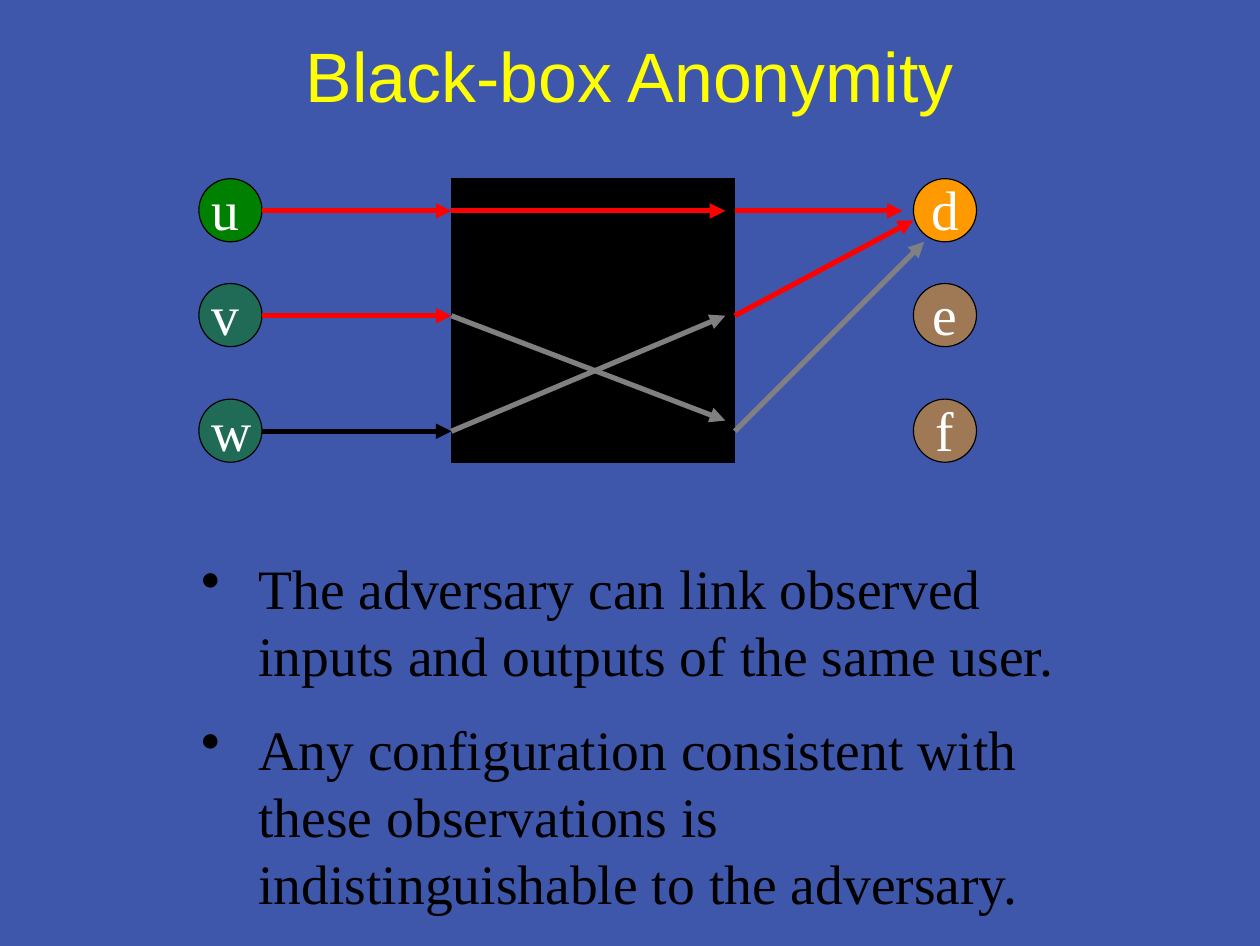
import pptx
import pptx.util
import pptx.dml.color
import pptx.enum.shapes
import pptx.enum.text
import pptx.oxml.ns
import lxml.etree

PX = 9525
THEME = {
    "background": "3F57AB", "title": "FFFF00", "text": "000000", "letter": "FFFFFF",
    "sender": "008000", "receiver": "FF9900", "box": "000000",
    "seen": "FF0000", "unseen": "000000", "possible": "808080",
    "title_font": "Arial", "body_font": "Times New Roman",
    "title_size": 44, "body_size": 35, "outline": 0.75, "arrow": 3.25,
}
ALIGN = pptx.enum.text.PP_ALIGN
SHAPES = pptx.enum.shapes.MSO_SHAPE


def color(name):
    return pptx.dml.color.RGBColor.from_string(THEME[name])


def add_text(lines, bounds, kind, ink, align, insets):
    box = slide.shapes.add_textbox(*[value * PX for value in bounds])
    frame = box.text_frame
    frame.word_wrap = True
    frame.margin_left = frame.margin_right = insets[0] * PX
    frame.margin_top = frame.margin_bottom = insets[1] * PX
    frame.text = "\n".join(lines)
    for paragraph in frame.paragraphs:
        paragraph.alignment = align
        paragraph.font.name = THEME[kind + "_font"]
        paragraph.font.size = pptx.util.Pt(THEME[kind + "_size"])
        paragraph.font.color.rgb = color(ink)
    return frame


presentation = pptx.Presentation()
presentation.slide_width = 1058 * PX
presentation.slide_height = 794 * PX
slide = presentation.slides.add_slide(presentation.slide_layouts[6])
slide.background.fill.solid()
slide.background.fill.fore_color.rgb = color("background")

title = add_text(["Black-box Anonymity"], (79, 0, 900, 132), "title", "title", ALIGN.CENTER, (0, 0))
title.vertical_anchor = pptx.enum.text.MSO_ANCHOR.MIDDLE
title.paragraphs[0].line_spacing = 0.95

CIRCLE = 53
SENDER_LEFT, RECEIVER_LEFT = 167, 767
SENDER_RIGHT = SENDER_LEFT + CIRCLE
BOX_LEFT, BOX_SIZE = 379, 238
BOX_RIGHT = BOX_LEFT + BOX_SIZE
ARROW_END = BOX_RIGHT - 8
ROWS = (177, 265, 362)
TOP, MIDDLE, BOTTOM = ROWS

outlines = [(SHAPES.RECTANGLE, BOX_LEFT, 150, BOX_SIZE, "box", False)]
for left, role in ((SENDER_LEFT, "sender"), (RECEIVER_LEFT, "receiver")):
    for row in ROWS:
        outlines.append((SHAPES.OVAL, left, row - 27, CIRCLE, role, row != TOP))

for preset, left, top, size, role, faded in outlines:
    shape = slide.shapes.add_shape(preset, left * PX, top * PX, size * PX, size * PX)
    shape.shadow.inherit = False
    shape.fill.solid()
    shape.fill.fore_color.rgb = color(role)
    shape.line.color.rgb = color("text")
    shape.line.width = pptx.util.Pt(THEME["outline"])
    if faded:
        fill_color = shape.fill._xPr.find(".//" + pptx.oxml.ns.qn("a:srgbClr"))
        lxml.etree.SubElement(fill_color, pptx.oxml.ns.qn("a:alpha"), val="50000")

letters = [
    ("u", SENDER_LEFT, CIRCLE, TOP, ALIGN.LEFT),
    ("v", SENDER_LEFT - 9, CIRCLE + 9, MIDDLE, ALIGN.CENTER),
    ("w", SENDER_LEFT, CIRCLE, BOTTOM, ALIGN.LEFT),
    ("d", RECEIVER_LEFT, CIRCLE, TOP, ALIGN.CENTER),
    ("e", RECEIVER_LEFT, CIRCLE, MIDDLE, ALIGN.CENTER),
    ("f", RECEIVER_LEFT, CIRCLE, BOTTOM, ALIGN.CENTER),
]
for letter, left, width, row, align in letters:
    add_text([letter], (left, row - 36, width, 67), "body", "letter", align, (11, 6))

arrows = [
    (SENDER_RIGHT, TOP, BOX_LEFT, TOP, "seen"),
    (SENDER_RIGHT, MIDDLE, BOX_LEFT, MIDDLE, "seen"),
    (SENDER_RIGHT, BOTTOM, BOX_LEFT, BOTTOM, "unseen"),
    (BOX_RIGHT, TOP, 758, TOP, "seen"),
    (BOX_LEFT, TOP, ARROW_END, TOP, "seen"),
    (BOX_LEFT, MIDDLE, ARROW_END, 353, "possible"),
    (BOX_LEFT, BOTTOM, ARROW_END, MIDDLE, "possible"),
    (BOX_RIGHT, BOTTOM, 776, 203, "possible"),
    (BOX_RIGHT, MIDDLE, RECEIVER_LEFT, 185, "seen"),
]
for x1, y1, x2, y2, ink in arrows:
    arrow = slide.shapes.add_connector(
        pptx.enum.shapes.MSO_CONNECTOR.STRAIGHT, x1 * PX, y1 * PX, x2 * PX, y2 * PX)
    arrow.line.color.rgb = color(ink)
    arrow.line.width = pptx.util.Pt(THEME["arrow"])
    lxml.etree.SubElement(arrow.line._get_or_add_ln(), pptx.oxml.ns.qn("a:tailEnd"), type="triangle")
    lxml.etree.SubElement(arrow._element.spPr, pptx.oxml.ns.qn("a:effectLst"))

findings = add_text(
    ["The adversary can link observed inputs and outputs of the same user.",
     "Any configuration consistent with these observations is indistinguishable to the adversary."],
    (158, 459, 784, 321), "body", "text", ALIGN.LEFT, (11, 6))
for paragraph in findings.paragraphs:
    paragraph.space_before = pptx.util.Pt(THEME["body_size"] / 2)
    properties = paragraph._p.get_or_add_pPr()
    properties.set("marL", str(48 * PX))
    properties.set("indent", str(-48 * PX))
    bullet = properties.makeelement(pptx.oxml.ns.qn("a:buChar"), {"char": "•"})
    properties.find(pptx.oxml.ns.qn("a:defRPr")).addprevious(bullet)

presentation.save("out.pptx")
